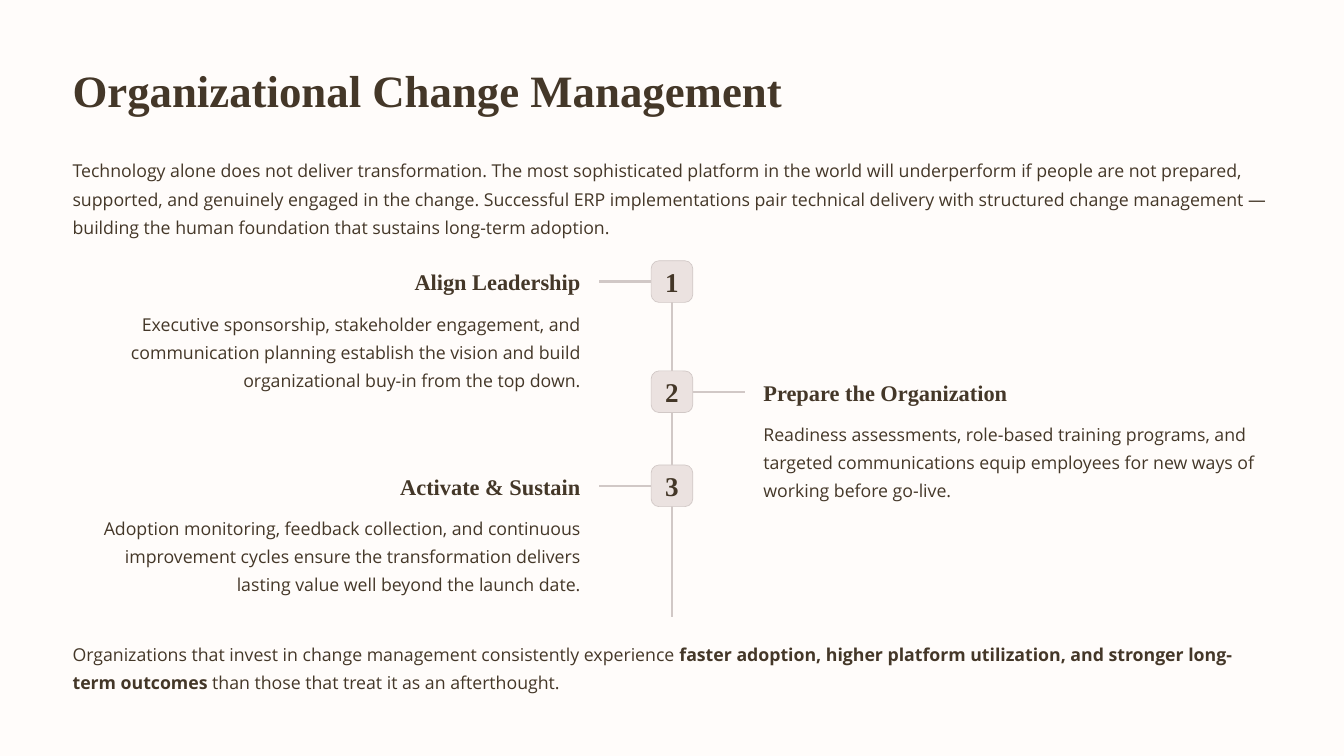
from pptx import Presentation
from pptx.dml.color import RGBColor
from pptx.enum.shapes import MSO_CONNECTOR, MSO_SHAPE
from pptx.enum.text import MSO_ANCHOR, PP_ALIGN
from pptx.oxml.ns import qn
from pptx.util import Inches, Pt
from lxml import etree

# Content
TITLE = "Organizational Change Management"
INTRO = (
    "Technology alone does not deliver transformation. The most sophisticated platform in the "
    "world will underperform if people are not prepared, supported, and genuinely engaged in the "
    "change. Successful ERP implementations pair technical delivery with structured change "
    "management — building the human foundation that sustains long-term adoption."
)
# (badge top, side, heading, description)
STEPS = [
    (1.94, "left", "Align Leadership",
     "Executive sponsorship, stakeholder engagement, and communication planning establish the "
     "vision and build organizational buy-in from the top down."),
    (2.76, "right", "Prepare the Organization",
     "Readiness assessments, role-based training programs, and targeted communications equip "
     "employees for new ways of working before go-live."),
    (3.46, "left", "Activate & Sustain",
     "Adoption monitoring, feedback collection, and continuous improvement cycles ensure the "
     "transformation delivers lasting value well beyond the launch date."),
]
# (text, bold)
CLOSING = [
    ("Organizations that invest in change management consistently experience ", False),
    ("faster adoption, higher platform utilization, and stronger long-term outcomes", True),
    (" than those that treat it as an afterthought.", False),
]

# Style and layout, in inches
COLORS = {"background": "FFFCFA", "text": "443728", "line": "D1C8C6", "badge": "EBE2E0"}
HEADING_FONT, BODY_FONT = "Times New Roman", "Open Sans"
SLIDE_WIDTH = 10
SLIDE_HEIGHT = SLIDE_WIDTH * 9 / 16
MARGIN, CONTENT_WIDTH = 0.54, 8.91
CENTER, BADGE = SLIDE_WIDTH / 2, 0.31
SPINE_TOP, SPINE_BOTTOM = 1.94, 4.59
ARM_END, TEXT_GAP, TEXT_WIDTH = 0.54, 0.68, 3.78


def color(name):
    return RGBColor.from_string(COLORS[name])


def write(shape, runs, font, size, spacing=1.0, align=PP_ALIGN.LEFT, anchor=MSO_ANCHOR.TOP):
    text_frame = shape.text_frame
    text_frame.margin_left = text_frame.margin_right = 0
    text_frame.margin_top = text_frame.margin_bottom = 0
    text_frame.word_wrap = True
    text_frame.vertical_anchor = anchor
    paragraph = text_frame.paragraphs[0]
    paragraph.alignment = align
    paragraph.line_spacing = spacing
    for text, bold in runs:
        run = paragraph.add_run()
        run.text = text
        run.font.name, run.font.size, run.font.bold = font, Pt(size), bold
        run.font.color.rgb = color("text")


def add_text(slide, left, top, width, height, *args, **options):
    box = slide.shapes.add_textbox(Inches(left), Inches(top), Inches(width), Inches(height))
    write(box, *args, **options)


def add_line(slide, x1, y1, x2, y2):
    line = slide.shapes.add_connector(
        MSO_CONNECTOR.STRAIGHT, Inches(x1), Inches(y1), Inches(x2), Inches(y2))
    line.line.color.rgb = color("line")
    line.line.width = Pt(1.15)
    etree.SubElement(line._element.spPr, qn("a:effectLst"))


def add_step(slide, number, top, side, heading, description):
    middle = top + BADGE / 2
    if side == "left":
        direction, text_left, align = -1, CENTER - TEXT_GAP - TEXT_WIDTH, PP_ALIGN.RIGHT
    else:
        direction, text_left, align = 1, CENTER + TEXT_GAP, PP_ALIGN.LEFT

    add_line(slide, CENTER + direction * BADGE / 2, middle, CENTER + direction * ARM_END, middle)

    badge = slide.shapes.add_shape(
        MSO_SHAPE.ROUNDED_RECTANGLE, Inches(CENTER - BADGE / 2), Inches(top),
        Inches(BADGE), Inches(BADGE))
    badge.adjustments[0] = 0.19
    badge.shadow.inherit = False
    badge.fill.solid()
    badge.fill.fore_color.rgb = color("badge")
    badge.line.color.rgb = color("line")
    badge.line.width = Pt(0.38)
    write(badge, [(str(number), True)], HEADING_FONT, 14.5,
          align=PP_ALIGN.CENTER, anchor=MSO_ANCHOR.MIDDLE)

    add_text(slide, text_left, top + 0.05, TEXT_WIDTH, 0.21,
             [(heading, True)], HEADING_FONT, 12, 1.04, align)
    add_text(slide, text_left, top + 0.34, TEXT_WIDTH, 0.65,
             [(description, False)], BODY_FONT, 9.5, 1.33, align)


def main():
    presentation = Presentation()
    presentation.slide_width = Inches(SLIDE_WIDTH)
    presentation.slide_height = Inches(SLIDE_HEIGHT)
    slide = presentation.slides.add_slide(presentation.slide_layouts[5])
    slide.background.fill.solid()
    slide.background.fill.fore_color.rgb = color("background")

    # Title and introduction
    title = slide.shapes.title
    title.left, title.top = Inches(MARGIN), Inches(0.45)
    title.width, title.height = Inches(CONTENT_WIDTH), Inches(0.42)
    write(title, [(TITLE, True)], HEADING_FONT, 24, 1.04)
    add_text(slide, MARGIN, 1.14, CONTENT_WIDTH, 0.65, [(INTRO, False)], BODY_FONT, 9.5, 1.33)

    # Timeline
    add_line(slide, CENTER, SPINE_TOP, CENTER, SPINE_BOTTOM)
    for number, step in enumerate(STEPS, start=1):
        add_step(slide, number, *step)

    # Closing statement
    add_text(slide, MARGIN, 4.74, CONTENT_WIDTH, 0.43, CLOSING, BODY_FONT, 9.5, 1.33)

    presentation.save("out.pptx")


if __name__ == "__main__":
    main()
